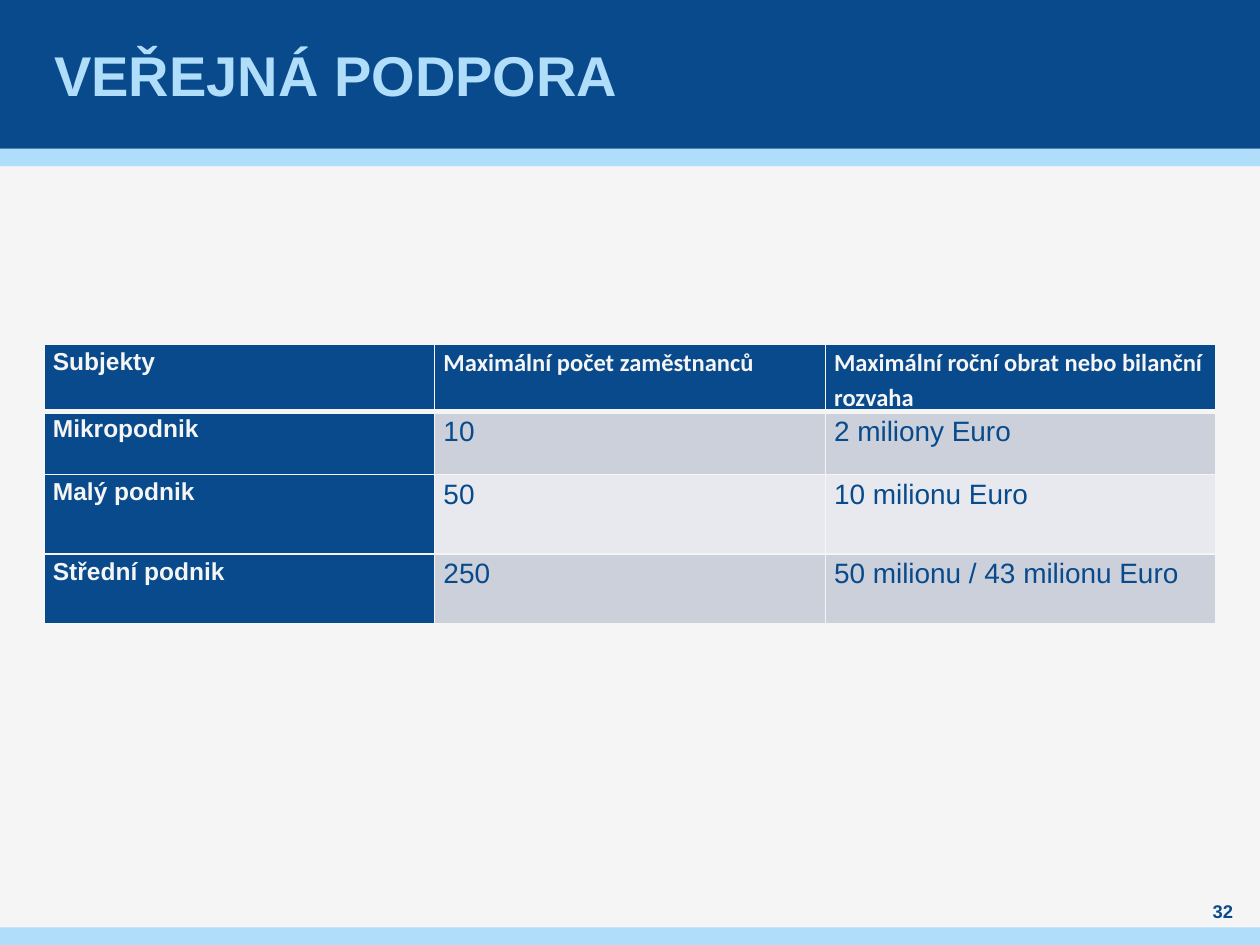
from lxml import etree
from pptx import Presentation
from pptx.dml.color import RGBColor
from pptx.enum.shapes import MSO_SHAPE as SHAPE
from pptx.enum.text import MSO_ANCHOR as ANCHOR, PP_ALIGN as ALIGN
from pptx.oxml.ns import qn
from pptx.util import Inches, Pt

NAVY = RGBColor(0x08, 0x4A, 0x8B)
SKY = RGBColor(0xAF, 0xDD, 0xFA)
PAPER = RGBColor(0xF5, 0xF5, 0xF5)
BAND_DARK = RGBColor(0xCC, 0xD0, 0xDA)
BAND_LIGHT = RGBColor(0xE7, 0xE9, 0xEE)

# Content
TITLE = "VEŘEJNÁ PODPORA"
PAGE = "32"
ROWS = [
    ("Subjekty", "Maximální počet zaměstnanců",
     "Maximální roční obrat nebo bilanční rozvaha"),
    ("Mikropodnik", "10", "2 miliony Euro"),
    ("Malý podnik", "50", "10 milionu Euro"),
    ("Střední podnik", "250", "50 milionu / 43 milionu Euro"),
]
ROW_HEIGHTS = [0.47, 0.5, 0.63, 0.55]
COL_WIDTH = 3.1
BARS = [(1.18, 0.14, SKY), (0, 1.18, NAVY), (7.36, 0.14, SKY)]  # top, height, fill


def set_font(p, size, color, bold=True, name="Arial"):
    f = p.font
    f.name, f.size, f.bold = name, Pt(size), bold
    f.color.rgb = color


def add_text(s, text, box, size, color, align=ALIGN.LEFT, side=0):
    tf = s.shapes.add_textbox(*map(Inches, box)).text_frame
    tf.word_wrap = True
    tf.vertical_anchor = ANCHOR.MIDDLE
    tf.margin_left = tf.margin_right = Inches(side)
    tf.margin_top = tf.margin_bottom = 0
    p = tf.paragraphs[0]
    p.text, p.alignment = text, align
    set_font(p, size, color)


def set_borders(cell, bottom, top):
    tc_pr = cell._tc.get_or_add_tcPr()
    widths = [("a:lnL", 1), ("a:lnR", 1), ("a:lnT", top), ("a:lnB", bottom)]
    for i, (tag, width) in enumerate(widths):
        ln = etree.Element(qn(tag), w=str(Pt(width)))
        fill = etree.SubElement(ln, qn("a:solidFill"))
        etree.SubElement(fill, qn("a:srgbClr"), val=str(PAPER))
        tc_pr.insert(i, ln)


prs = Presentation()
prs.slide_width, prs.slide_height = Inches(10), Inches(7.5)
s = prs.slides.add_slide(prs.slide_layouts[6])
s.background.fill.solid()
s.background.fill.fore_color.rgb = PAPER

# Header and footer bars
for top, height, color in BARS:
    sp = s.shapes.add_shape(SHAPE.RECTANGLE, 0, Inches(top),
                            prs.slide_width, Inches(height))
    sp.shadow.inherit = False
    sp.fill.solid()
    sp.fill.fore_color.rgb = color
    sp.line.fill.background()

# Title and page number
add_text(s, TITLE, (0.39, 0, 9.21, 1.18), 32, SKY, side=0.04)
add_text(s, PAGE, (9.45, 7.13, 0.51, 0.2), 10.5, NAVY, ALIGN.CENTER)

# Table of company sizes
n_cols = len(ROWS[0])
table = s.shapes.add_table(len(ROWS), n_cols, Inches(0.35), Inches(2.73),
                           Inches(COL_WIDTH * n_cols),
                           Inches(sum(ROW_HEIGHTS))).table
table.first_col = True
for col in table.columns:
    col.width = Inches(COL_WIDTH)
for r, (texts, height) in enumerate(zip(ROWS, ROW_HEIGHTS)):
    table.rows[r].height = Inches(height)
    for c, text in enumerate(texts):
        cell = table.cell(r, c)
        cell.margin_left = cell.margin_right = Inches(0.07)
        cell.margin_top = cell.margin_bottom = 0
        p = cell.text_frame.paragraphs[0]
        p.text, p.line_spacing = text, 1.15
        cell.fill.solid()
        if r == 0 or c == 0:
            cell.fill.fore_color.rgb = NAVY
            set_font(p, 14, PAPER, name="Calibri" if c else "Arial")
        else:
            cell.fill.fore_color.rgb = BAND_DARK if r % 2 else BAND_LIGHT
            set_font(p, 16, NAVY, bold=False)
        set_borders(cell, bottom=3 if r == 0 else 1, top=3 if r == 1 else 1)

prs.save("out.pptx")
